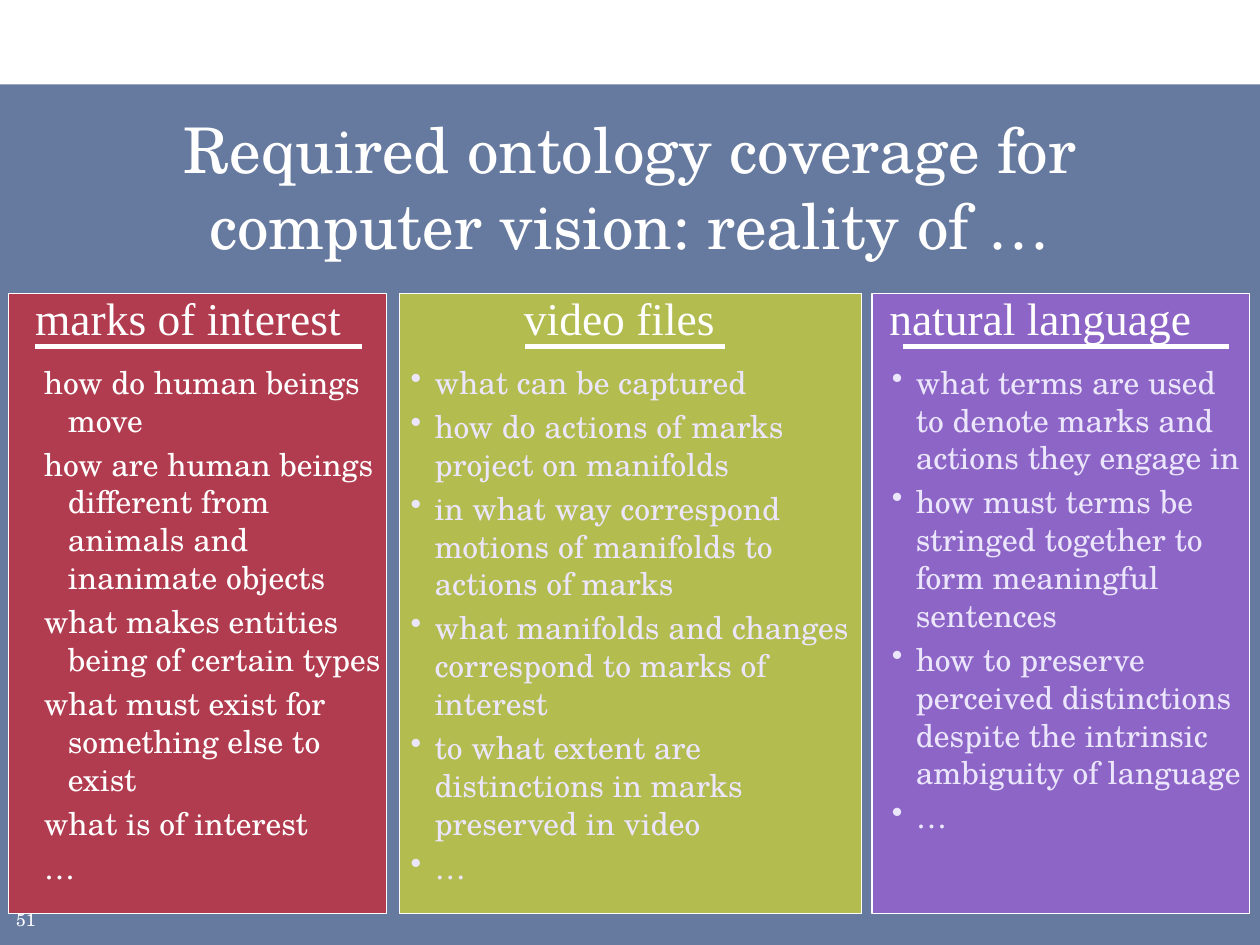
from dataclasses import dataclass

from lxml import etree
from pptx import Presentation
from pptx import util as u
from pptx.dml.color import RGBColor
from pptx.enum import shapes, text
from pptx.oxml import ns


@dataclass(frozen=True)
class Theme:
    serif: str = "TeX Gyre Schola"
    roman: str = "Times New Roman"
    white: str = "FFFFFF"
    lilac: str = "EBE6FC"
    navy: str = "002060"
    red: str = "FF0000"
    yellow: str = "FFFF00"
    purple: str = "B453EF"
    title: int = 36
    heading: int = 26
    body: int = 18
    number: int = 10


def set_values(target, values):
    for name, value in values.items():
        setattr(target, name, value)


class SlideBuilder:
    def __init__(self, slide, theme):
        self.slide, self.theme = slide, theme

    def fill_text(self, box, lines, face, size, color, align=text.PP_ALIGN.LEFT,
                  anchor=text.MSO_ANCHOR.TOP, hanging=0, bullet=None):
        frame = box.text_frame
        set_values(frame, {"word_wrap": True, "vertical_anchor": anchor,
                           "auto_size": text.MSO_AUTO_SIZE.NONE})
        for index, line in enumerate(lines):
            para = frame.add_paragraph() if index else frame.paragraphs[0]
            para.alignment = align
            if index:
                para.space_before = u.Pt(size * 0.2)
            if hanging:
                props = para._p.get_or_add_pPr()
                props.set("marL", str(u.Inches(hanging)))
                props.set("indent", str(-u.Inches(hanging)))
                if bullet:
                    etree.SubElement(props, ns.qn("a:buChar")).set("char", bullet)
            span = para.add_run()
            span.text = line
            set_values(span.font, {"name": face, "size": u.Pt(size), "bold": False})
            span.font.color.rgb = RGBColor.from_string(color)

    def title(self, wording, area):
        box = self.slide.shapes.title
        set_values(box, dict(zip(("left", "top", "width", "height"),
                                 map(u.Inches, area))))
        self.fill_text(box, [wording], self.theme.serif, self.theme.title,
                       self.theme.white, align=text.PP_ALIGN.CENTER)
        # Bring the title in front of the backdrop
        self.slide.shapes._spTree.append(box._element)

    def text_box(self, area, lines, *style, **layout):
        box = self.slide.shapes.add_textbox(*map(u.Inches, area))
        self.fill_text(box, lines, *style, **layout)

    def panel(self, parent, area, color, opacity, outline=None):
        box = parent.shapes.add_shape(shapes.MSO_SHAPE.RECTANGLE,
                                      *map(u.Inches, area))
        box.shadow.inherit = False
        box.fill.solid()
        box.fill.fore_color.rgb = RGBColor.from_string(color)
        tint = box._element.spPr.find(".//" + ns.qn("a:srgbClr"))
        etree.SubElement(tint, ns.qn("a:alpha")).set("val", str(opacity * 1000))
        if outline:
            box.line.color.rgb = RGBColor.from_string(outline)
            box.line.width = u.Pt(0.75)
        else:
            box.line.fill.background()

    def rule(self, parent, start, end, level):
        line = parent.shapes.add_connector(
            shapes.MSO_CONNECTOR.STRAIGHT,
            *map(u.Inches, (start, level, end, level)))
        line.line.color.rgb = RGBColor.from_string(self.theme.white)
        line.line.width = u.Pt(3)
        etree.SubElement(line._element.spPr, ns.qn("a:effectLst"))

    def column(self, col):
        theme = self.theme
        # Tinted panel with the rule under its heading
        group = self.slide.shapes.add_group_shape()
        left, width = col["panel"]
        self.panel(group, (left, 2.33, width, 4.92), col["fill"], 50, theme.white)
        self.rule(group, *col["rule"], 2.75)
        # Heading and list
        left, width = col["heading"]
        self.text_box((left, 2.25, width, 0.54), [col["name"]],
                      theme.roman, theme.heading, theme.white)
        left, width = col["list"]
        self.text_box((left, 2.83, width, 4.5), col["lines"], theme.serif,
                      theme.body, col["color"], hanging=0.19,
                      bullet=col["bullet"])


THEME = Theme()
COLUMNS = [
    {"name": "marks of interest", "fill": THEME.red, "color": THEME.white,
     "bullet": None, "panel": (0.07, 3), "rule": (0.28, 2.87),
     "heading": (0.18, 2.85), "list": (0.25, 2.91),
     "lines": ["how do human beings move",
               "how are human beings different from animals and inanimate objects",
               "what makes entities being of certain types",
               "what must exist for something else to exist",
               "what is of interest",
               "…"]},
    {"name": "video files", "fill": THEME.yellow, "color": THEME.lilac,
     "bullet": "•", "panel": (3.17, 3.67), "rule": (4.17, 5.75),
     "heading": (4.06, 1.75), "list": (3.16, 3.75),
     "lines": ["what can be captured",
               "how do actions of marks project on manifolds",
               "in what way correspond motions of manifolds to actions of marks",
               "what manifolds and changes correspond to marks of interest",
               "to what extent are distinctions in marks preserved in video",
               "…"]},
    {"name": "natural language", "fill": THEME.purple, "color": THEME.lilac,
     "bullet": "•", "panel": (6.92, 3), "rule": (7.17, 9.75),
     "heading": (6.96, 3), "list": (6.98, 3),
     "lines": ["what terms are used to denote marks and actions they engage in",
               "how must terms be stringed together to form meaningful sentences",
               "how to preserve perceived distinctions despite the intrinsic "
               "ambiguity of language",
               "…"]},
]


def main():
    deck = Presentation()
    set_values(deck, {"slide_width": u.Inches(10), "slide_height": u.Inches(7.5)})
    slide = deck.slides.add_slide(deck.slide_layouts.get_by_name("Title Only"))
    builder = SlideBuilder(slide, THEME)

    # Backdrop and slide number
    builder.panel(slide, (0, 0.67, 10, 6.83), THEME.navy, 60)
    builder.text_box((0.03, 7.17, 0.39, 0.25), ["51"], THEME.serif, THEME.number,
                     THEME.white, anchor=text.MSO_ANCHOR.MIDDLE)

    # Title and the three columns
    builder.title("Required ontology coverage for computer vision: reality of …",
                  (0.25, 0.83, 9.5, 0.83))
    for column in COLUMNS:
        builder.column(column)

    deck.save("out.pptx")


if __name__ == "__main__":
    main()
